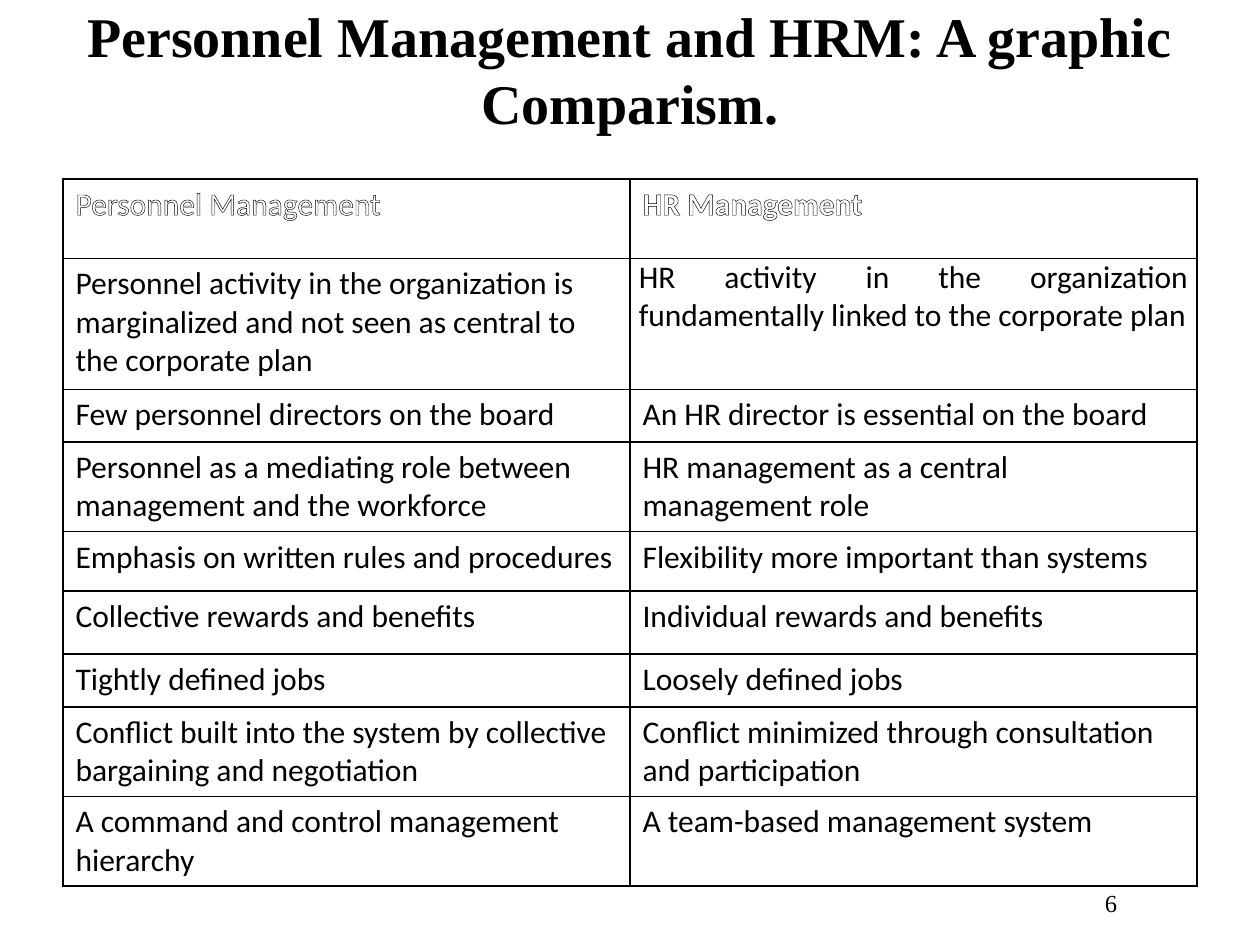
from lxml.etree import SubElement as Sub
from pptx import Presentation
from pptx.dml.color import RGBColor as Rgb
from pptx.enum.text import MSO_ANCHOR as Anchor, MSO_AUTO_SIZE as Auto, PP_ALIGN as Align
from pptx.oxml import parse_xml
from pptx.oxml.ns import nsdecls, qn
from pptx.util import Inches, Pt

HUES = {"ink": "000000", "paper": "FFFFFF"}
SERIF, SANS = "Times New Roman", "Calibri"
COLS, ROWS = 100, 75  # slide grid, each unit a tenth of an inch

HEADS = ("Personnel Management", "HR Management")
PAIRS = [  # row height in grid rows, personnel view, HR view
    (10.4, "Personnel activity in the organization is marginalized and not seen "
           "as central to the corporate plan",
     "HR activity in the organization fundamentally linked to the corporate plan"),
    (4.2, "Few personnel directors on the board",
     "An HR director is essential on the board"),
    (6.7, "Personnel as a mediating role between management and the workforce",
     "HR management as a central management role"),
    (4.7, "Emphasis on written rules and procedures",
     "Flexibility more important than systems"),
    (5, "Collective rewards and benefits", "Individual rewards and benefits"),
    (4.2, "Tightly defined jobs", "Loosely defined jobs"),
    (6.3, "Conflict built into the system by collective bargaining and negotiation",
     "Conflict minimized through consultation and participation"),
    (6.3, "A command and control management hierarchy",
     "A team-based management system"),
]


def line(tag, width):
    """Return a solid ink line element."""
    return parse_xml(
        f'<a:{tag} {nsdecls("a")} w="{Pt(width)}"><a:solidFill>'
        f'<a:srgbClr val="{HUES["ink"]}"/></a:solidFill></a:{tag}>')


class Deck:
    def __init__(self):
        self.prs = Presentation()
        self.prs.slide_width, self.prs.slide_height = Inches(10), Inches(7.5)
        self.slide = self.prs.slides.add_slide(self.prs.slide_layouts[5])
        fill = self.slide.background.fill
        fill.solid()
        fill.fore_color.rgb = Rgb.from_string(HUES["paper"])

    def wide(self, n):
        return round(self.prs.slide_width * n / COLS)

    def high(self, n):
        return round(self.prs.slide_height * n / ROWS)

    def box(self, x, y, w, h):
        return self.wide(x), self.high(y), self.wide(w), self.high(h)

    def style(self, par, face, size, hue="ink", bold=False, align=Align.LEFT):
        par.alignment = align
        font = par.font
        font.name, font.size, font.bold = face, Pt(size), bold
        font.color.rgb = Rgb.from_string(HUES[hue])

    def title(self, text, *area):
        shape = self.slide.shapes.title
        shape.left, shape.top, shape.width, shape.height = self.box(*area)
        frame = shape.text_frame
        frame.text, frame.vertical_anchor = text, Anchor.MIDDLE
        frame.word_wrap, frame.auto_size = True, Auto.NONE
        self.style(frame.paragraphs[0], SERIF, 32, bold=True, align=Align.CENTER)

    def label(self, text, *area):
        frame = self.slide.shapes.add_textbox(*self.box(*area)).text_frame
        frame.text, frame.auto_size = text, Auto.SHAPE_TO_FIT_TEXT
        frame.word_wrap = True
        self.style(frame.paragraphs[0], SERIF, 14)

    def cell(self, cell, text, **look):
        cell.text = text
        self.style(cell.text_frame.paragraphs[0], SANS, 18, **look)
        cell.fill.background()
        props = cell._tc.get_or_add_tcPr()
        for i, side in enumerate(("lnL", "lnR", "lnT", "lnB")):
            props.insert(i, line(side, 1))

    def hollow(self, cell):
        """Outline the letters of a heading cell."""
        run = cell.text_frame.paragraphs[0].runs[0]
        run.font._element.insert(0, line("ln", 0.75))
        run.font.color.rgb = Rgb.from_string(HUES["paper"])

    def table(self, heads, pairs, head_row, x, y, w):
        tall = [head_row] + [pair[0] for pair in pairs]
        grid = self.slide.shapes.add_table(
            len(tall), len(heads), *self.box(x, y, w, sum(tall))).table
        grid.first_row = grid.horz_banding = False
        for row, size in zip(grid.rows, tall):
            row.height = self.high(size)
        for c, text in enumerate(heads):
            self.cell(grid.cell(0, c), text, hue="paper", bold=c == 1)
            self.hollow(grid.cell(0, c))
        for r, (_, *texts) in enumerate(pairs, 1):
            for c, text in enumerate(texts):
                self.cell(grid.cell(r, c), text)
        return grid


def main():
    deck = Deck()

    # Title
    deck.title("Personnel Management and HRM: A graphic Comparism.", 5, -0.8, 90, 12.5)

    # Comparison table, with one tight justified cell
    grid = deck.table(HEADS, PAIRS, 6.3, 5, 14.2, 90)
    tight = grid.cell(1, 1)
    tight.margin_left = tight.margin_right = Inches(0.07)
    tight.margin_top = tight.margin_bottom = 0
    # A closing space keeps the last line spread as body text
    tight.text_frame.paragraphs[0].alignment = Align.JUSTIFY

    # Page number
    deck.label("6", 86.7, 70, 2.9, 3.4)

    deck.prs.save("out.pptx")


if __name__ == "__main__":
    main()
